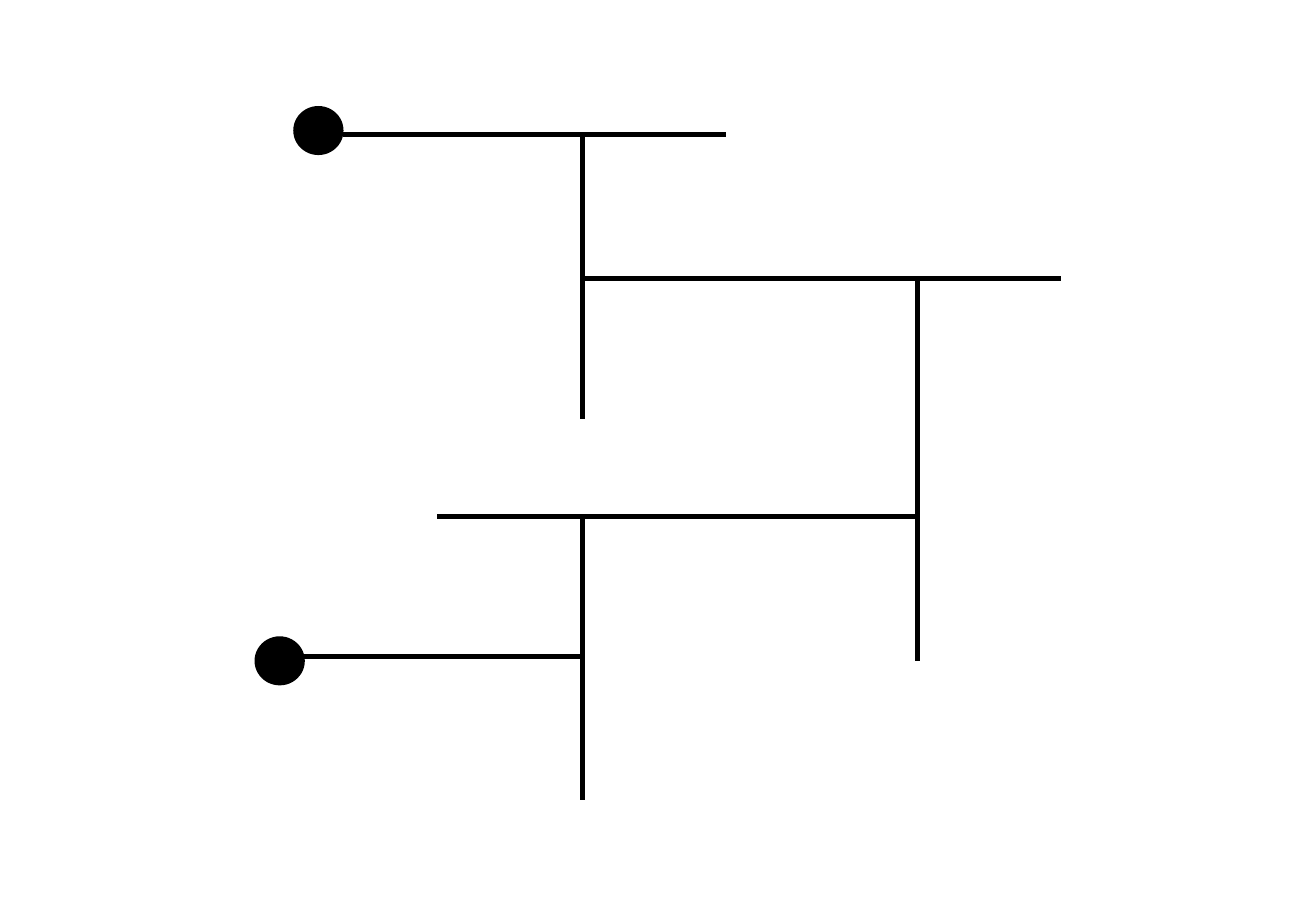
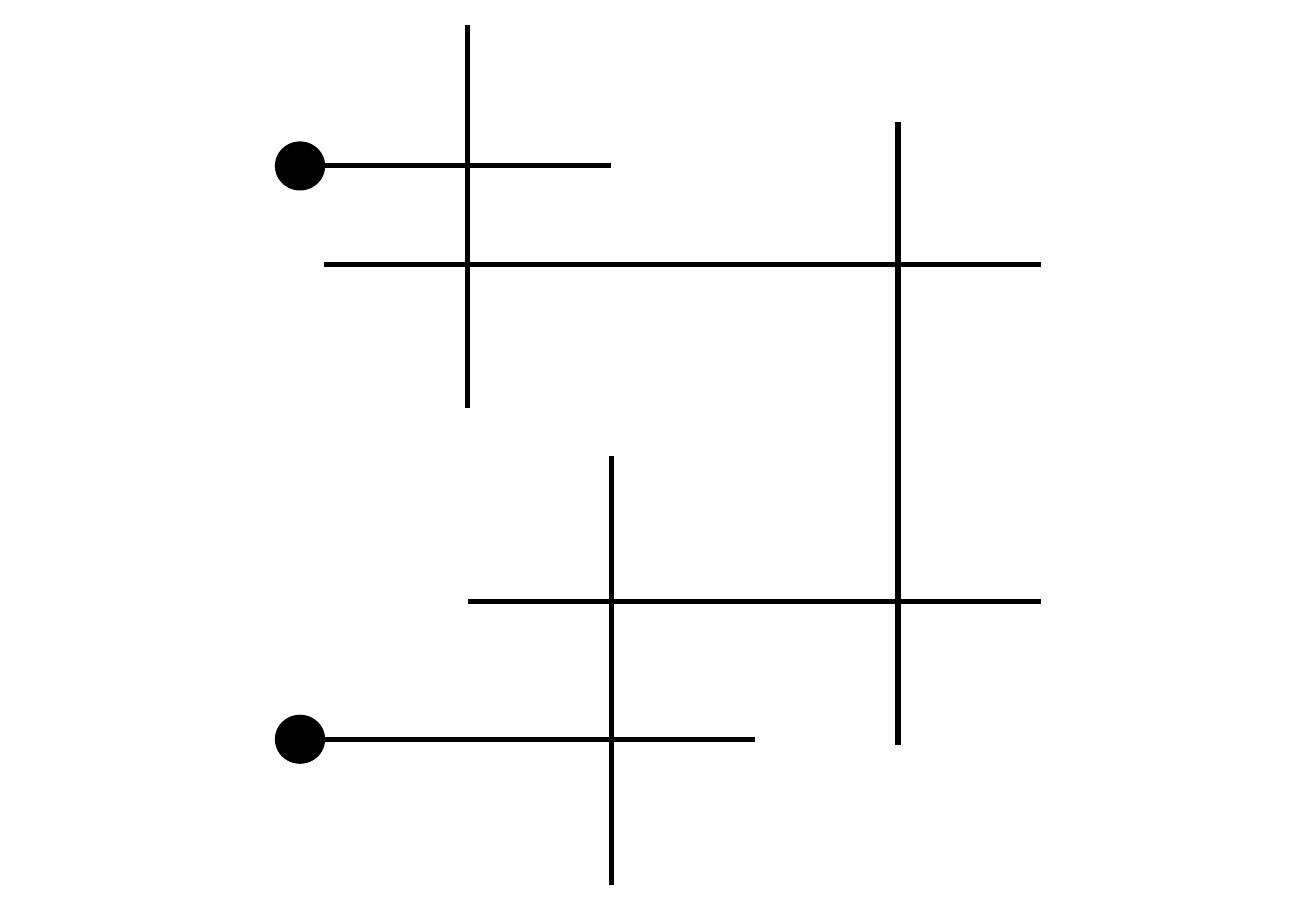
from itertools import pairwise

from lxml import etree
from pptx import Presentation
from pptx import util as u
from pptx.dml.color import RGBColor
from pptx.enum import shapes
from pptx.oxml.ns import qn

BLACK = RGBColor(0, 0, 0)
STUB = 1.18  # length of a free line end in inches: one grid cell
NODE_WIDTH, NODE_HEIGHT = 0.4, 0.39

# Positions are grid columns and rows; each track is cut at its stops.
BRANCHED = {
    "origin": (2.42, 1.11),
    "nodes": [(0.17, -0.03), (-0.1, 3.67)],
    "rows": [
        (0, [0.34, 2.01, 3.01]),
        (1, [2.01, 4.35, 5.35]),
        (2.66, [1, 2.01, 4.35]),
        (3.64, [0, 2.01]),
    ],
    "columns": [
        (2.01, [0, 1, 1.98]),
        (4.35, [1, 2.66, 3.67]),
        (2.01, [2.66, 3.67, 4.64]),
    ],
}
CROSSED = {
    "origin": (2.67, 0.21),
    "nodes": [(-0.17, 0.98), (-0.17, 4.98)],
    "rows": [
        (0.98, [0, 1, 2]),
        (1.67, [0, 1, 4, 5]),
        (4.02, [1, 2, 4, 5]),
        (4.98, [0, 2, 3]),
    ],
    "columns": [
        (1, [0, 1, 1.67, 2.67]),
        (4, [0.67, 1.67, 4.02, 5.02]),
        (2, [3, 4, 5, 6]),
    ],
}


def add_line(group, start, end):
    line = group.shapes.add_connector(
        shapes.MSO_CONNECTOR.STRAIGHT, *map(u.Inches, (*start, *end))
    )
    line.line.color.rgb = BLACK
    line.line.width = u.Pt(3)
    etree.SubElement(line._element.spPr, qn("a:effectLst"))


def add_node(group, x, y):
    """Draw a round terminal centred on x, y."""
    box = (x - NODE_WIDTH / 2, y - NODE_HEIGHT / 2, NODE_WIDTH, NODE_HEIGHT)
    node = group.shapes.add_shape(
        shapes.MSO_SHAPE.FLOWCHART_CONNECTOR, *map(u.Inches, box)
    )
    node.shadow.inherit = False
    node.fill.solid()
    node.fill.fore_color.rgb = BLACK
    node.line.color.rgb = BLACK
    node.line.width = u.Pt(1)


def add_diagram(slide, origin, nodes, rows, columns):
    group = slide.shapes.add_group_shape()

    def place(column, row):
        return origin[0] + column * STUB, origin[1] + row * STUB

    for node in nodes:
        add_node(group, *place(*node))
    for row, stops in rows:
        for start, end in pairwise(stops):
            add_line(group, place(start, row), place(end, row))
    for column, stops in columns:
        for start, end in pairwise(stops):
            add_line(group, place(column, start), place(column, end))


def main():
    deck = Presentation()
    deck.slide_width, deck.slide_height = u.Inches(10.83), u.Inches(7.5)
    for diagram in (BRANCHED, CROSSED):
        add_diagram(deck.slides.add_slide(deck.slide_layouts[6]), **diagram)
    deck.save("out.pptx")


if __name__ == "__main__":
    main()
